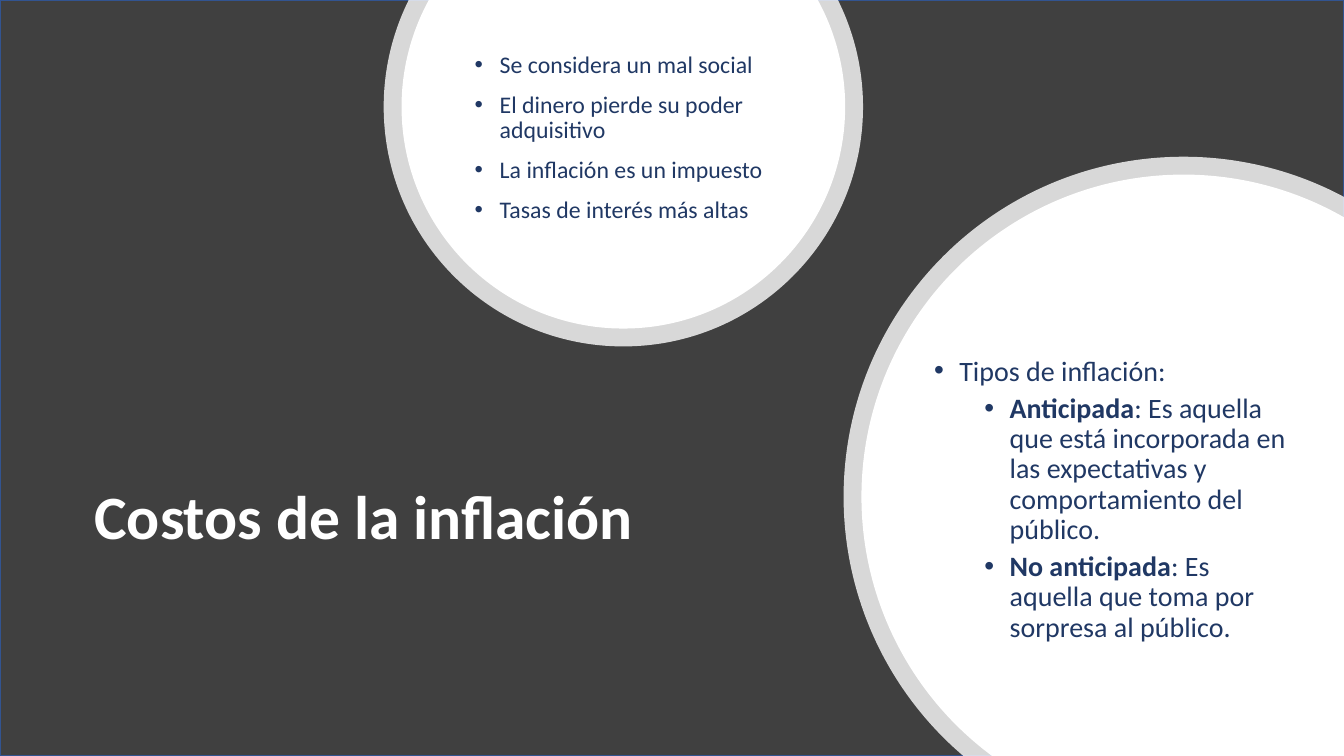
"""Build the slide on the costs of inflation."""
import math

from lxml import etree
from pptx import Presentation
from pptx import util as u
from pptx.dml.color import RGBColor
from pptx.enum import shapes, text
from pptx.oxml import ns

DARK = RGBColor(0x40, 0x40, 0x40)
EDGE = RGBColor(0x32, 0x54, 0x91)
WHITE = RGBColor(0xFF, 0xFF, 0xFF)
NAVY = RGBColor(0x20, 0x38, 0x64)
W, H = 33.87, 19.05


def add_disc(x, y, radius, angles, corners, alpha):
    """Add a white disc: an arc through the angles, then the corners."""
    stops = [math.radians(a) for a in angles]
    arc = [(x + radius * math.cos(a), y + radius * math.sin(a)) for a in stops]
    pts = [(u.Cm(px), u.Cm(py)) for px, py in arc + corners]
    fb = s.shapes.build_freeform(*pts[0])
    fb.add_line_segments(pts[1:], close=True)
    sp = fb.convert_to_shape()
    sp.shadow.inherit = False
    sp.fill.solid()
    sp.fill.fore_color.rgb = WHITE
    sp.line.fill.background()
    if alpha < 100:
        clr = sp.fill._xPr.find(".//" + ns.qn("a:srgbClr"))
        etree.SubElement(clr, ns.qn("a:alpha")).set("val", str(alpha * 1000))
    lines = list(sp._element.iter(ns.qn("a:lnTo")))
    for line, a, b, (ax, ay), (bx, by) in zip(
            lines, stops, stops[1:], arc, arc[1:]):
        k = radius * 4 / 3 * math.tan((b - a) / 4)
        curve = etree.Element(ns.qn("a:cubicBezTo"))
        for px, py in [(ax - k * math.sin(a), ay + k * math.cos(a)),
                       (bx + k * math.sin(b), by - k * math.cos(b)),
                       (bx, by)]:
            pt = etree.SubElement(curve, ns.qn("a:pt"))
            pt.set("x", str(u.Cm(px) - sp.left))
            pt.set("y", str(u.Cm(py) - sp.top))
        line.getparent().replace(line, curve)


def add_text(box, size, color, paragraphs, bullets=True):
    """Add a text box from (level, [(text, bold), ...]) paragraphs."""
    tf = s.shapes.add_textbox(*[u.Cm(v) for v in box]).text_frame
    tf.word_wrap = True
    tf.vertical_anchor = text.MSO_ANCHOR.MIDDLE
    for i, (level, runs) in enumerate(paragraphs):
        p = tf.add_paragraph() if i else tf.paragraphs[0]
        p.level = level
        p.line_spacing = 0.9
        if bullets:
            p.space_before = u.Pt(5 if level else 10)
            pPr = p._p.get_or_add_pPr()
            pPr.set("marL", str(u.Cm(0.635 + 1.27 * level)))
            pPr.set("indent", str(-u.Cm(0.635)))
            etree.SubElement(pPr, ns.qn("a:buFont")).set("typeface", "Arial")
            etree.SubElement(pPr, ns.qn("a:buChar")).set("char", "•")
        for words, bold in runs:
            r = p.add_run()
            r.text = words
            r.font.name = "Calibri"
            r.font.size = u.Pt(size)
            r.font.bold = bold
            r.font.color.rgb = color


prs = Presentation()
prs.slide_width, prs.slide_height = u.Cm(W), u.Cm(H)
s = prs.slides.add_slide(prs.slide_layouts[6])

sp = s.shapes.add_shape(shapes.MSO_SHAPE.RECTANGLE, 0, 0, u.Cm(W), u.Cm(H))
sp.shadow.inherit = False
sp.fill.solid()
sp.fill.fore_color.rgb = DARK
sp.line.color.rgb = EDGE
sp.line.width = u.Pt(1)

add_text((2.13, 9.73, 16.81, 6.73), 44, WHITE,
         [(0, [("Costos de la inflación", True)])], bullets=False)

for ring, alpha in [(0.45, 80), (0, 100)]:
    x, y, radius = 15.71, 2.69, 5.59 + ring
    top = math.degrees(math.asin(y / radius))
    add_disc(x, y, radius, [-top, 0, 90, 180, 180 + top], [], alpha)

    x, y, radius = 29.83, 12.52, 8.12 + ring
    bottom = math.degrees(math.asin((H - y) / radius))
    right = math.degrees(math.acos((W - x) / radius))
    add_disc(x, y, radius, [180 - bottom, 180, 270, 360 - right],
             [(W, H)], alpha)

costs = [
    "Se considera un mal social",
    "El dinero pierde su poder adquisitivo",
    "La inflación es un impuesto",
    "Tasas de interés más altas",
]
add_text((11.71, 0.99, 8, 4.98), 17, NAVY,
         [(0, [(cost, False)]) for cost in costs])

add_text((23.29, 8.74, 9.65, 7.72), 20, NAVY, [
    (0, [("Tipos de inflación:", False)]),
    (1, [("Anticipada", True),
         (": Es aquella que está incorporada en las expectativas y "
          "comportamiento del público.", False)]),
    (1, [("No anticipada", True),
         (": Es aquella que toma por sorpresa al público.", False)]),
])

prs.save("out.pptx")
